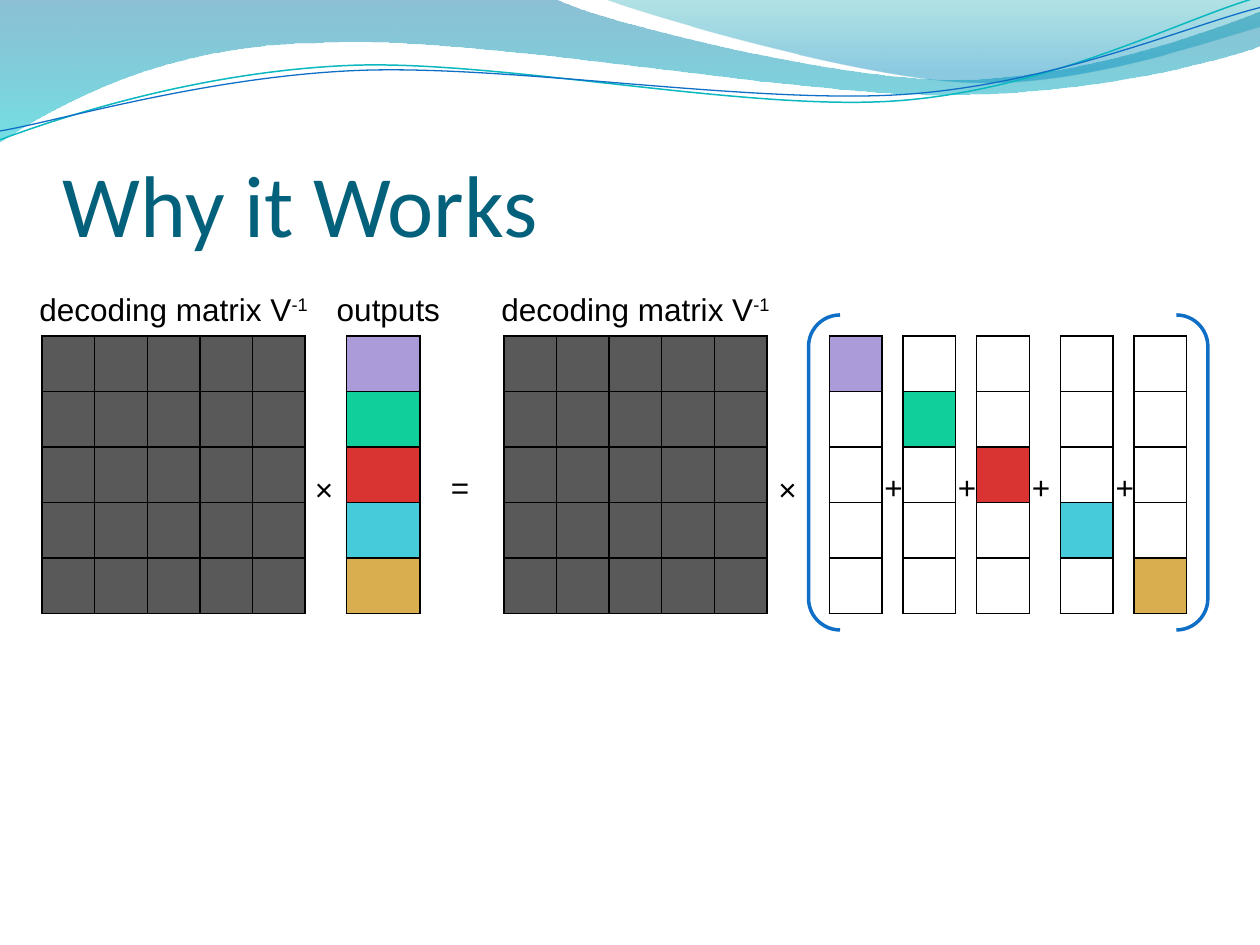
from lxml import etree
from pptx import Presentation
from pptx.dml.color import RGBColor
from pptx.enum import shapes, text
from pptx.oxml import ns
from pptx.util import Cm, Pt

BLACK = RGBColor(0x00, 0x00, 0x00)
WHITE = RGBColor(0xFF, 0xFF, 0xFF)
GREY = RGBColor(0x59, 0x59, 0x59)
NAVY = RGBColor(0x04, 0x61, 0x7B)
BLUE = RGBColor(0x0F, 0x6F, 0xC6)
TEAL = RGBColor(0x0A, 0xB8, 0xBF)
HUES = [RGBColor(0xAC, 0x9B, 0xD9), RGBColor(0x10, 0xCF, 0x9B),
        RGBColor(0xD9, 0x33, 0x32), RGBColor(0x45, 0xCB, 0xD9),
        RGBColor(0xD9, 0xAE, 0x4E)]
SIZE = len(HUES)

# Wave outlines in inches: a pair is a line end, six numbers are a curve.
INCH = 2.54
BANDS = [
    ([(0, -0.01), (4.4, -0.01), (4.76, 0.17, 6.64, 0.63, 7.58, 0.63),
      (8.53, 0.63, 9.58, 0.26, 10, 0.09), (10.01, 0.36),
      (9.83, 0.44, 8.7, 0.76, 7.46, 0.75),
      (6.22, 0.75, 3.82, 0.28, 2.57, 0.34),
      (1.29, 0.35, 0.46, 0.83, -0.01, 1.13), (0, -0.01)],
     [(0, RGBColor(0x00, 0x74, 0xA1), 45), (1, RGBColor(0x00, 0xC6, 0xCF), 55)]),
    ([(4.79, -0.01), (5.09, 0.11, 6.82, 0.62, 7.69, 0.65),
      (8.56, 0.69, 9.61, 0.32, 10, 0.21), (10, 0), (4.79, -0.01)],
     [(0, RGBColor(0x00, 0xA1, 0xA9), 30), (0.8, RGBColor(0x00, 0x8B, 0xBF), 45)]),
]
CURVES = [
    ([(0, 1.11), (0.48, 0.93, 1.58, 0.57, 2.77, 0.52),
      (3.95, 0.47, 5.93, 0.89, 7.13, 0.8),
      (8.33, 0.71, 9.38, 0.15, 9.98, -0.02)], TEAL, 0.85),
    ([(0, 1.04), (0.47, 0.96, 1.64, 0.61, 2.83, 0.56),
      (4.03, 0.51, 5.97, 0.83, 7.17, 0.75),
      (8.36, 0.67, 9.41, 0.21, 10, 0.06)], BLUE, 0.75),
]

# Everything below is in centimetres.
TOP, CELL, ROW = 6.77, 1.06, 1.12
MATRICES = [0.85, 10.16]
OUTPUT, BROAD = 6.99, 1.48
UNITS = [16.72, 18.2, 19.69, 21.38, 22.86]
LABELS = [("decoding matrix V", "-1", 0.43, 6.14),
          ("outputs", "", 6.35, 2.96),
          ("decoding matrix V", "-1", 9.74, 6.14)]
SIGNS = [("×", 6.1, 9.35), ("=", 8.84, 9.32), ("×", 15.44, 9.35)]
SIGNS += [("+", left + 0.86, 9.32) for left in UNITS[:-1]]

deck = Presentation()
deck.slide_width, deck.slide_height = Cm(25.4), Cm(19.05)
slide = deck.slides.add_slide(deck.slide_layouts[6])


def add_wave(steps, closed):
    """Draw an outline whose six-number steps become cubic curves."""
    pairs = [[(Cm(s[i] * INCH), Cm(s[i + 1] * INCH)) for i in range(0, len(s), 2)]
             for s in steps]
    pen = slide.shapes.build_freeform(*pairs[0][0])
    for pair in pairs[1:]:
        pen.add_line_segments(pair, close=False)
    if closed:
        pen.add_line_segments([], close=True)
    wave = pen.convert_to_shape()
    wave.shadow.inherit = False
    lines = iter(list(wave._element.iter(ns.qn("a:lnTo"))))
    for pair in pairs[1:]:
        first, *rest = [next(lines) for _ in pair]
        if rest:
            first.tag = ns.qn("a:cubicBezTo")
            for line in rest:
                first.append(line[0])
                line.getparent().remove(line)
    return wave


def add_grid(left, width, fills):
    """Add a table with one cell for each colour in the rows of fills."""
    wide = len(fills[0])
    grid = slide.shapes.add_table(len(fills), wide, Cm(left), Cm(TOP),
                                  Cm(width * wide), Cm(ROW * len(fills))).table
    grid.first_row = grid.horz_banding = False
    for col in grid.columns:
        col.width = Cm(width)
    for r, row in enumerate(fills):
        for c, hue in enumerate(row):
            cell = grid.cell(r, c)
            props = cell._tc.get_or_add_tcPr()
            for side in ("lnL", "lnR", "lnT", "lnB"):
                edge = etree.SubElement(props, ns.qn("a:" + side), w=str(Pt(1)))
                solid = etree.SubElement(edge, ns.qn("a:solidFill"))
                etree.SubElement(solid, ns.qn("a:srgbClr"), val=str(BLACK))
            cell.fill.solid()
            cell.fill.fore_color.rgb = hue


def add_text(words, left, top, width, height, size=18, face="Arial", hue=BLACK,
             align=None, wrap=True, upper=""):
    frame = slide.shapes.add_textbox(Cm(left), Cm(top), Cm(width), Cm(height)).text_frame
    frame.word_wrap = wrap
    para = frame.paragraphs[0]
    para.text = words
    para.alignment = align
    if upper:
        para.add_run().text = upper
    for run in para.runs:
        run.font.size, run.font.name = Pt(size), face
        run.font.color.rgb = hue
    if upper:
        para.runs[-1].font._element.set("baseline", "30000")
    return frame


for steps, stops in BANDS:
    band = add_wave(steps, True)
    band.line.fill.background()
    band.fill.gradient()
    band.fill.gradient_angle = 270
    for stop, (place, hue, alpha) in zip(band.fill.gradient_stops, stops):
        stop.position = place
        stop.color.rgb = hue
    for tint, (_, _, alpha) in zip(band._element.spPr.iter(ns.qn("a:srgbClr")), stops):
        etree.SubElement(tint, ns.qn("a:alpha"), val=str(alpha * 1000))

for steps, hue, weight in CURVES:
    curve = add_wave(steps, False)
    curve.fill.background()
    curve.line.color.rgb, curve.line.width = hue, Pt(weight)

title = add_text("Why it Works", 1.27, 1.96, 22.86, 3.18, 50, "Calibri", NAVY)
title.margin_left = title.margin_right = title.margin_bottom = 0
title.vertical_anchor = text.MSO_ANCHOR.BOTTOM

for left in MATRICES:
    add_grid(left, CELL, [[GREY] * SIZE] * SIZE)
add_grid(OUTPUT, BROAD, [[hue] for hue in HUES])
for k, left in enumerate(UNITS):
    add_grid(left, CELL, [[hue if r == k else WHITE] for r, hue in enumerate(HUES)])

bracket = slide.shapes.add_shape(shapes.MSO_SHAPE.DOUBLE_BRACKET,
                                 Cm(16.3), Cm(6.35), Cm(8.05), Cm(6.35))
bracket.adjustments[0] = 0.1
bracket.shadow.inherit = False
bracket.fill.background()
bracket.line.color.rgb, bracket.line.width = BLUE, Pt(2)

for words, upper, left, width in LABELS:
    add_text(words, left, 5.72, width, 1.02, align=text.PP_ALIGN.CENTER, upper=upper)
for sign, left, top in SIGNS:
    add_text(sign, left, top, 0.9, 1.02, wrap=False)

deck.save("out.pptx")
